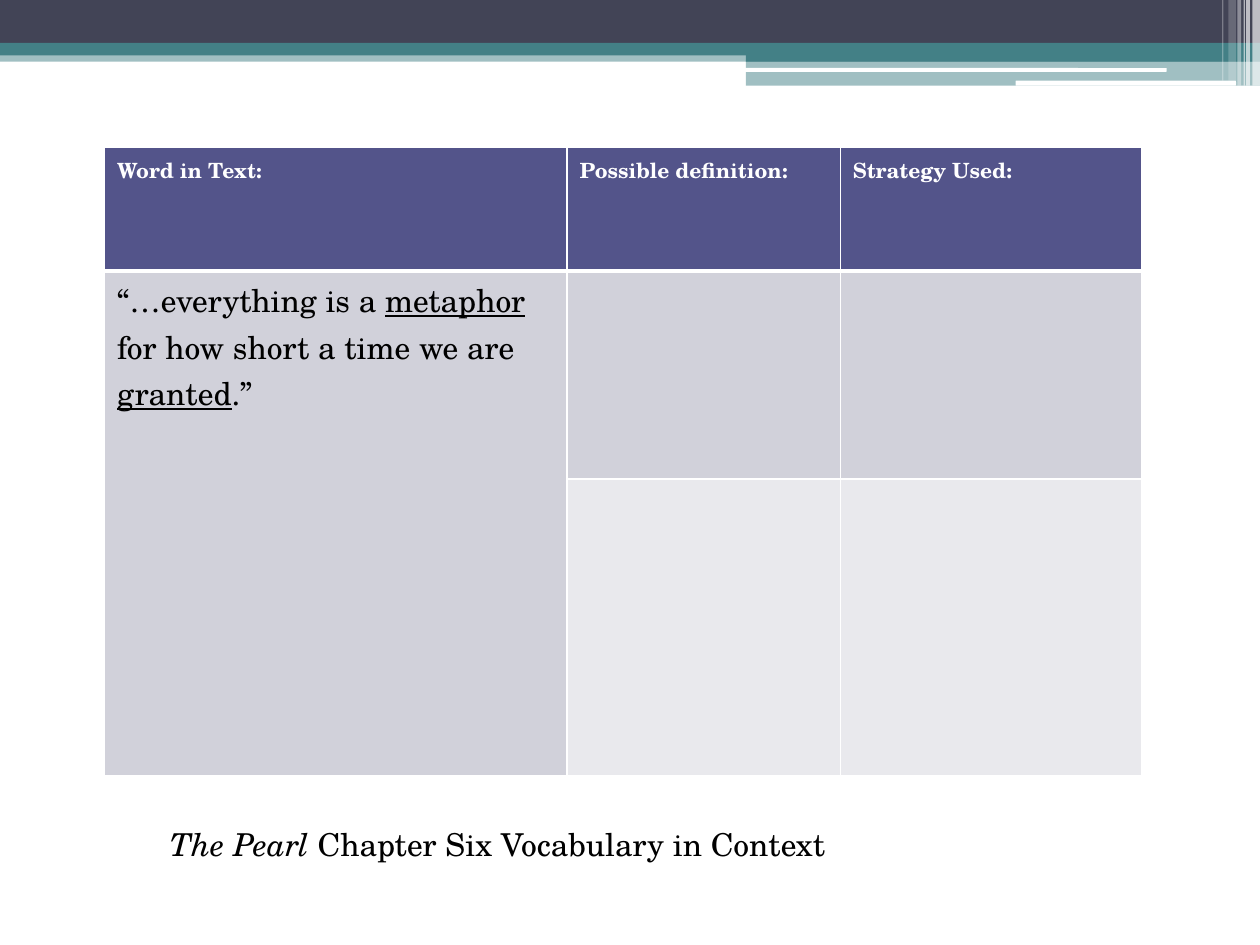
from lxml import etree
from pptx import Presentation
from pptx.dml.color import RGBColor
from pptx.enum.shapes import MSO_SHAPE
from pptx.enum.text import MSO_AUTO_SIZE
from pptx.oxml.ns import qn
from pptx.util import Inches, Pt

RECT = MSO_SHAPE.RECTANGLE
ROUND = MSO_SHAPE.ROUNDED_RECTANGLE
GROW = MSO_AUTO_SIZE.SHAPE_TO_FIT_TEXT


class Theme:
    font = "TeX Gyre Schola"
    white, black = "FFFFFF", "000000"
    slate, teal = "424456", "438086"
    header, band_dark, band_light = "53548A", "D1D1DA", "E9E9ED"
    head_size, body_size = 12, 18
    rule, head_rule = 1, 3


HEADINGS = ["Word in Text:", "Possible definition:", "Strategy Used:"]
COL_WIDTHS = [3.67, 2.17, 2.39]
ROW_HEIGHTS = [0.98, 1.65, 2.36]
ROW_FILLS = [Theme.header, Theme.band_dark, Theme.band_light]
UNDERLINE = {"underline": True}
QUOTE = [("“…everything is a ", {}), ("metaphor", UNDERLINE), ("\n", {}),
         ("for how short a time we are ", {}), ("granted", UNDERLINE), (".”", {})]
CAPTION = [("The Pearl ", {"italic": True}), ("Chapter Six Vocabulary in Context", {})]

# left, top, width, height, colour, opacity in percent
BANDS = [
    (0, 0.4, 10, 0.09, Theme.teal, 50),
    (0, 0, 10, 0.34, Theme.slate, 100),
    (0, 0.34, 10, 0.1, Theme.teal, 100),
    (5.92, 0.39, 4.08, 0.1, Theme.teal, 100),
    (5.92, 0.48, 4.08, 0.2, Theme.teal, 50),
]
WHITE_BARS = [(5.91, 0.54, 3.35, 0.03), (8.06, 0.64, 1.75, 0.04)]
# left, width, height, opacity in percent
STRIPES = [(9.94, 0.06, 0.68, 65), (9.89, 0.03, 0.68, 65), (9.87, 0.01, 0.68, 60),
           (9.82, 0.03, 0.68, 40), (9.75, 0.06, 0.64, 20), (9.7, 0.01, 0.64, 30)]


class SlideBuilder:
    def __init__(self, slide, theme):
        self.slide, self.theme = slide, theme

    def bar(self, x, y, w, h, color, opacity=100, kind=RECT):
        sp = self.slide.shapes.add_shape(kind, Inches(x), Inches(y), Inches(w), Inches(h))
        sp.shadow.inherit = False
        sp.line.fill.background()
        sp.fill.solid()
        sp.fill.fore_color.rgb = RGBColor.from_string(color)
        if opacity < 100:
            clr = sp._element.spPr.find(qn("a:solidFill"))[0]
            etree.SubElement(clr, qn("a:alpha"), val=str(opacity * 1000))

    def add_runs(self, tf, runs, size, color, **common):
        p = tf.paragraphs[0]
        for text, fmt in runs:
            if text == "\n":
                p.add_line_break()
                continue
            r = p.add_run()
            r.text = text
            style = {"name": self.theme.font, "size": Pt(size), **common, **fmt}
            for key, value in style.items():
                setattr(r.font, key, value)
            r.font.color.rgb = RGBColor.from_string(color)

    def text(self, x, y, w, h, runs):
        tf = self.slide.shapes.add_textbox(Inches(x), Inches(y), Inches(w), Inches(h)).text_frame
        tf.word_wrap = True
        tf.auto_size = GROW
        self.add_runs(tf, runs, self.theme.body_size, self.theme.black)

    def borders(self, cell, widths):
        """Put white rules, in points, on the left, right, top and bottom of a cell."""
        tc_pr = cell._tc.get_or_add_tcPr()
        for i, (side, width) in enumerate(zip("LRTB", widths)):
            ln = etree.Element(qn(f"a:ln{side}"), w=str(Pt(width)))
            fill = etree.SubElement(ln, qn("a:solidFill"))
            etree.SubElement(fill, qn("a:srgbClr"), val=self.theme.white)
            tc_pr.insert(i, ln)

    def table(self, x, y, col_widths, row_heights, row_fills):
        t = self.theme
        frame = self.slide.shapes.add_table(
            len(row_heights), len(col_widths), Inches(x), Inches(y),
            Inches(sum(col_widths)), Inches(sum(row_heights)))
        table = frame.table
        for col, width in zip(table.columns, col_widths):
            col.width = Inches(width)
        for i, (row, height) in enumerate(zip(table.rows, row_heights)):
            row.height = Inches(height)
            top = t.head_rule if i == 1 else t.rule
            bottom = t.head_rule if i == 0 else t.rule
            for cell in row.cells:
                cell.fill.solid()
                cell.fill.fore_color.rgb = RGBColor.from_string(row_fills[i])
                self.borders(cell, (t.rule, t.rule, top, bottom))
        return table


def main():
    prs = Presentation()
    prs.slide_width, prs.slide_height = Inches(10), Inches(7.5)
    s = SlideBuilder(prs.slides.add_slide(prs.slide_layouts[6]), Theme)

    for band in BANDS:
        s.bar(*band)
    for box in WHITE_BARS:
        s.bar(*box, Theme.white, kind=ROUND)
    for x, w, h, opacity in STRIPES:
        s.bar(x, 0, w, h, Theme.white, opacity)

    table = s.table(0.83, 1.17, COL_WIDTHS, ROW_HEIGHTS, ROW_FILLS)
    for cell, heading in zip(table.rows[0].cells, HEADINGS):
        s.add_runs(cell.text_frame, [(heading, {})], Theme.head_size, Theme.white, bold=True)
    quote_cell = table.cell(1, 0)
    quote_cell.merge(table.cell(2, 0))
    s.add_runs(quote_cell.text_frame, QUOTE, Theme.body_size, Theme.black)

    s.text(1.25, 6.5, 7.25, 0.4, CAPTION)
    prs.save("out.pptx")


if __name__ == "__main__":
    main()
